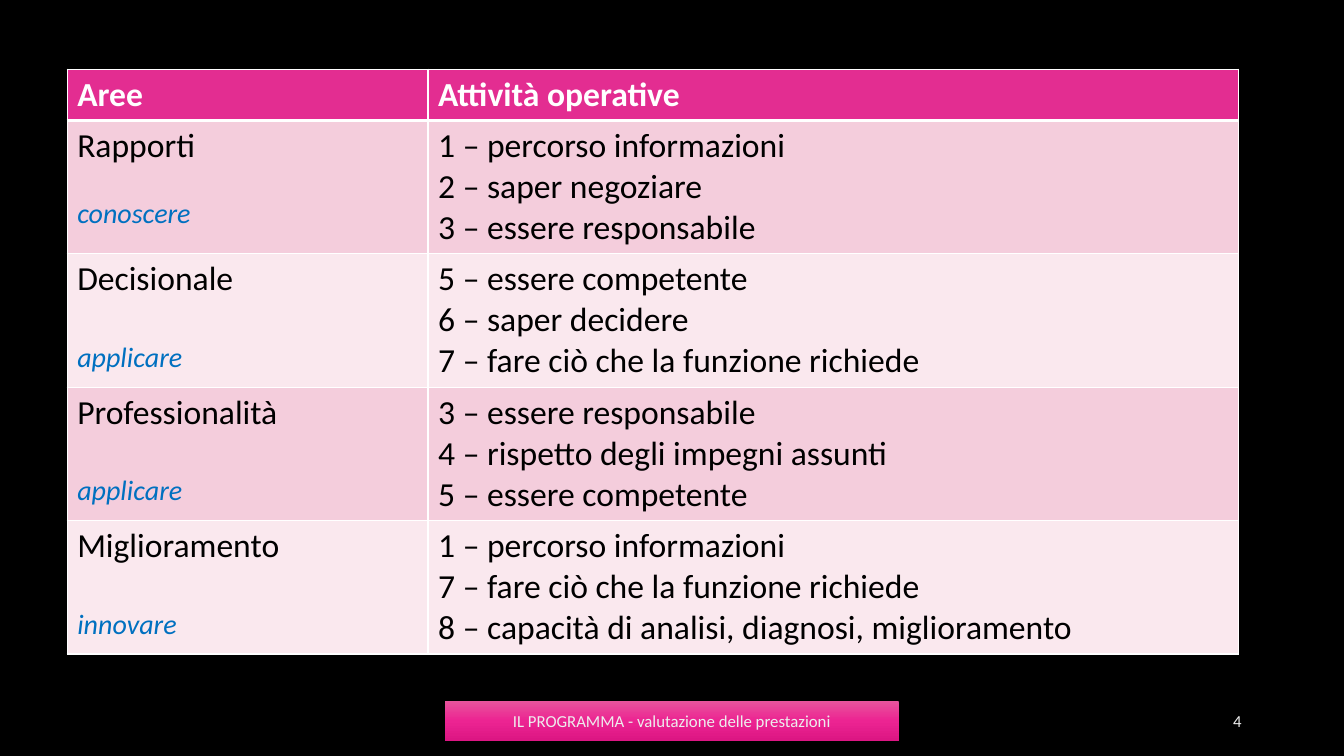
import copy
from dataclasses import dataclass

import pptx
import pptx.dml.color
import pptx.enum.shapes
import pptx.enum.text
import pptx.oxml
import pptx.oxml.ns
import pptx.util
from lxml import etree

Pt = pptx.util.Pt
RGB = pptx.dml.color.RGBColor.from_string
qn = pptx.oxml.ns.qn
ALIGN = pptx.enum.text.PP_ALIGN
MIDDLE = pptx.enum.text.MSO_ANCHOR.MIDDLE


@dataclass(frozen=True)
class Theme:
    font: str = "Calibri"
    background: str = "000000"
    ink: str = "000000"
    light: str = "FFFFFF"
    header: str = "E32D91"
    bands: tuple = ("F4CDDC", "FAE8EE")
    stage: str = "0070C0"
    footer_text: str = "EDEDED"
    banner: tuple = ("E8559D", "EC2492", "DC1683")
    body_size: float = 24
    stage_size: float = 20
    footer_size: float = 12
    thin: float = 1
    thick: float = 3


THEME = Theme()
HEADINGS = ("Aree", "Attività operative")
# area, stage, gap above the stage in points, activities
AREAS = (
    ("Rapporti", "conoscere", 22,
     ("1 – percorso informazioni", "2 – saper negoziare", "3 – essere responsabile")),
    ("Decisionale", "applicare", 29.3,
     ("5 – essere competente", "6 – saper decidere",
      "7 – fare ciò che la funzione richiede")),
    ("Professionalità", "applicare", 29.3,
     ("3 – essere responsabile", "4 – rispetto degli impegni assunti",
      "5 – essere competente")),
    ("Miglioramento", "innovare", 29.3,
     ("1 – percorso informazioni", "7 – fare ciò che la funzione richiede",
      "8 – capacità di analisi, diagnosi, miglioramento")),
)


def write(frame, text, size=THEME.body_size, color=THEME.ink, bold=False,
          italic=False, align=ALIGN.LEFT, gap=0):
    """Fill the frame's empty first paragraph, or add a paragraph after its text."""
    paragraph = frame.add_paragraph() if frame.text else frame.paragraphs[0]
    paragraph.alignment = align
    if gap:
        paragraph.space_before = Pt(gap)
    run = paragraph.add_run()
    run.text = text
    font = run.font
    font.name, font.size = THEME.font, Pt(size)
    font.bold, font.italic = bold, italic
    font.color.rgb = RGB(color)


def style_cell(cell, fill, top=THEME.thin, bottom=THEME.thin):
    """Borders go in before the fill, as the schema orders them."""
    properties = cell._tc.get_or_add_tcPr()
    for side, width in zip("LRTB", (THEME.thin, THEME.thin, top, bottom)):
        line = etree.SubElement(properties, qn(f"a:ln{side}"), w=str(Pt(width)))
        solid = etree.SubElement(line, qn("a:solidFill"))
        etree.SubElement(solid, qn("a:srgbClr"), val=THEME.light)
    cell.fill.solid()
    cell.fill.fore_color.rgb = RGB(fill)


def add_areas_table(slide, left, top, width, height):
    area_width, header_height = 257.8, 36.5
    row_height = (height - header_height) / len(AREAS)
    table = slide.shapes.add_table(len(AREAS) + 1, len(HEADINGS), Pt(left), Pt(top),
                                   Pt(width), Pt(height)).table
    table.columns[0].width = Pt(area_width)
    table.columns[1].width = Pt(width - area_width)
    table.rows[0].height = Pt(header_height)

    for column, heading in enumerate(HEADINGS):
        cell = table.cell(0, column)
        style_cell(cell, THEME.header, bottom=THEME.thick)
        write(cell.text_frame, heading, color=THEME.light, bold=True)

    for row, (area, stage, gap, activities) in enumerate(AREAS, 1):
        table.rows[row].height = Pt(row_height)
        area_cell, activity_cell = table.cell(row, 0), table.cell(row, 1)
        for cell in (area_cell, activity_cell):
            style_cell(cell, THEME.bands[(row - 1) % 2],
                       top=THEME.thick if row == 1 else THEME.thin)
        write(area_cell.text_frame, area)
        write(area_cell.text_frame, stage, size=THEME.stage_size,
              color=THEME.stage, italic=True, gap=gap)
        for activity in activities:
            write(activity_cell.text_frame, activity)


def fill_banner(shape):
    """Apply a three-stop gradient running from top to bottom."""
    shape.fill.gradient()
    shape.fill.gradient_angle = 270
    stops = shape._element.spPr.find(qn("a:gradFill")).find(qn("a:gsLst"))
    stops.insert(1, copy.deepcopy(stops[0]))
    for stop, color, position in zip(shape.fill.gradient_stops, THEME.banner, (0, 0.5, 1)):
        stop.color.rgb = RGB(color)
        stop.position = position


def add_footer(slide, left, top, width, height):
    banner_width, number_width = 324, 216
    banner = slide.shapes.add_shape(pptx.enum.shapes.MSO_SHAPE.RECTANGLE, Pt(left),
                                    Pt(top), Pt(banner_width), Pt(height))
    banner.shadow.inherit = False
    banner.line.fill.background()
    fill_banner(banner)
    number = slide.shapes.add_textbox(Pt(left + width - number_width), Pt(top),
                                      Pt(number_width), Pt(height))
    for shape, text, align in (
            (banner, "IL PROGRAMMA - valutazione delle prestazioni", ALIGN.CENTER),
            (number, "4", ALIGN.RIGHT)):
        frame = shape.text_frame
        frame.word_wrap = True
        frame.vertical_anchor = MIDDLE
        write(frame, text, size=THEME.footer_size, color=THEME.footer_text, align=align)


def main():
    deck = pptx.Presentation()
    deck.slide_width, deck.slide_height = Pt(960), Pt(540)
    slide = deck.slides.add_slide(deck.slide_layouts[6])
    slide.background.fill.solid()
    slide.background.fill.fore_color.rgb = RGB(THEME.background)
    add_areas_table(slide, left=48, top=49.5, width=836.6, height=417.7)
    add_footer(slide, left=318, top=500.5, width=576, height=28.75)
    deck.save("out.pptx")


if __name__ == "__main__":
    main()
